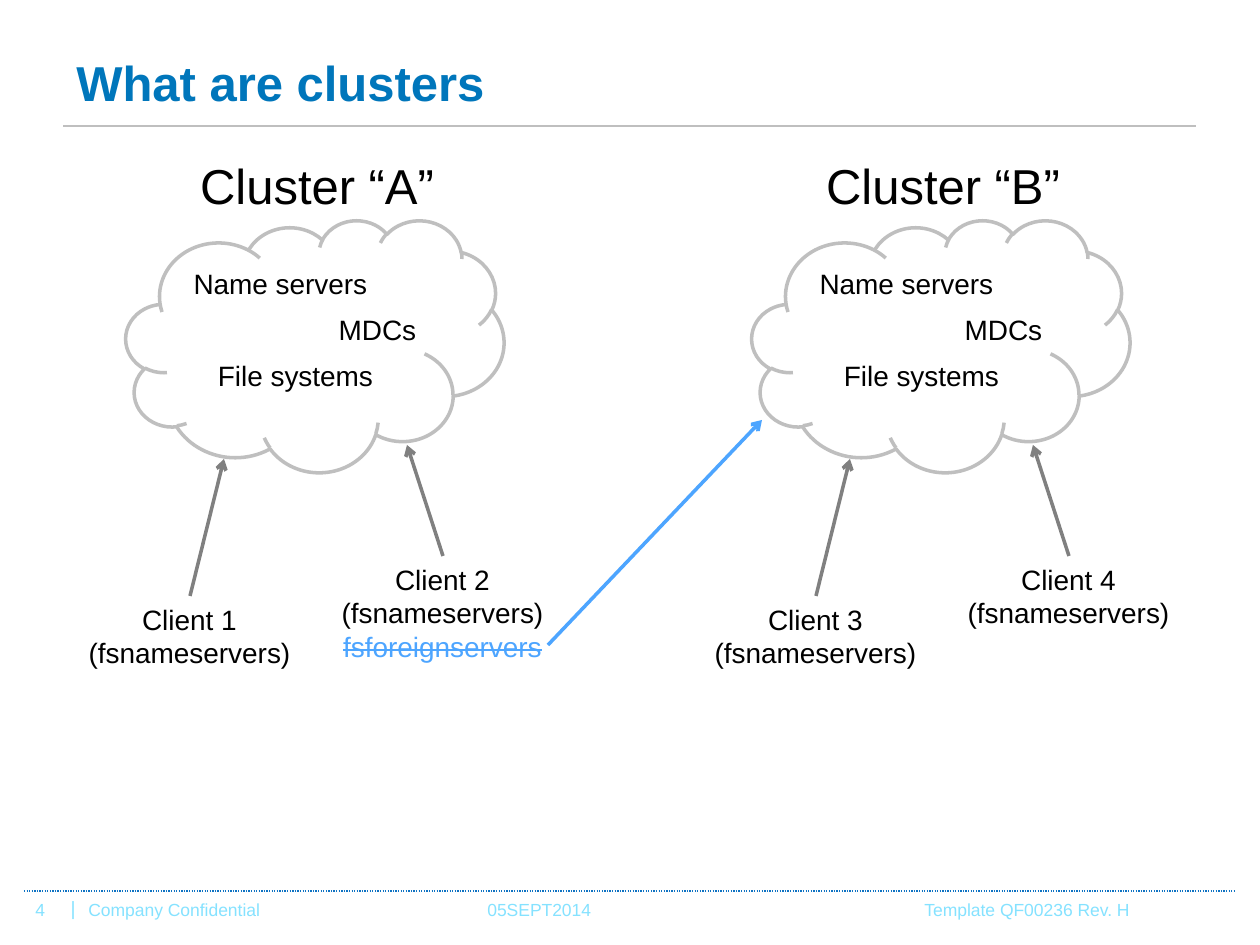
from lxml.etree import SubElement
from pptx import Presentation
from pptx.dml.color import RGBColor
from pptx.enum.dml import MSO_LINE
from pptx.enum.shapes import MSO_CONNECTOR, MSO_SHAPE
from pptx.enum.text import MSO_ANCHOR, MSO_AUTO_SIZE, PP_ALIGN
from pptx.oxml.ns import qn
from pptx.util import Emu, Pt

PX = 914400 / 126
BLACK, GRAY, SILVER = "000000", "808080", "BFBFBF"
BLUE, SKY, TITLE_BLUE, RULE_BLUE = "4DA5FF", "85E2FF", "0076BB", "0F73C3"
CLUSTER_STEP = 626


def px(value):
    return Emu(round(value * PX))


def color(hex_code):
    return RGBColor.from_string(hex_code)


def add_text(page, at, text, size=16, fill=BLACK, bold=False, center=True,
             anchor=MSO_ANCHOR.TOP, grow=True, struck=None):
    """Add a text box; struck is a further line in struck-out blue."""
    box = page.shapes.add_textbox(*map(px, at))
    frame = box.text_frame
    frame.word_wrap = True
    frame.auto_size = MSO_AUTO_SIZE.SHAPE_TO_FIT_TEXT if grow else MSO_AUTO_SIZE.NONE
    frame.vertical_anchor = anchor
    para = frame.paragraphs[0]
    para.alignment = PP_ALIGN.CENTER if center else PP_ALIGN.LEFT
    para.font.size = Pt(size)
    lines = [(line, fill) for line in text.split("\n")]
    if struck:
        lines.append((struck, BLUE))
    for index, (line, line_color) in enumerate(lines):
        if index:
            para.add_line_break()
        span = para.add_run()
        span.text = line
        span.font.name = "Arial"
        span.font.size = Pt(size)
        span.font.bold = bold
        span.font.color.rgb = color(line_color)
    if struck:
        span.font._element.set("strike", "sngStrike")


def add_line(page, start, end, stroke, width=0.75, dash=None, arrow=False):
    line = page.shapes.add_connector(MSO_CONNECTOR.STRAIGHT, *map(px, start + end))
    line.line.color.rgb = color(stroke)
    line.line.width = Pt(width)
    if dash:
        line.line.dash_style = dash
    if arrow:
        SubElement(line.line._get_or_add_ln(), qn("a:tailEnd"), type="arrow")
    SubElement(line._element.spPr, qn("a:effectLst"))


def add_cloud(page, at):
    cloud = page.shapes.add_shape(MSO_SHAPE.CLOUD, *map(px, at))
    cloud.shadow.inherit = False
    cloud.fill.background()
    cloud.line.color.rgb = color(SILVER)
    cloud.line.width = Pt(2)


def add_cluster(page, shift, name, clients, foreign=None):
    """Add a cloud with its services and the two clients that point to it."""
    add_cloud(page, (126 + shift, 220, 378, 252))
    add_text(page, (126 + shift, 149, 382, 72), f"Cluster “{name}”", size=28)
    for left, top, service in ((154, 260, "Name servers"), (251, 306, "MDCs"),
                               (169, 352, "File systems")):
        add_text(page, (left + shift, top, 253, 47), service)
    low, high = (f"Client {number}\n(fsnameservers)" for number in clients)
    add_text(page, (63 + shift, 596, 253, 80), low)
    add_text(page, (316 + shift, 556, 253, 115 if foreign else 80), high, struck=foreign)
    for start, end in (((190, 596), (224, 459)), ((443, 556), (407, 445))):
        add_line(page, (start[0] + shift, start[1]), (end[0] + shift, end[1]),
                 GRAY, width=2, arrow=True)


def add_footer(page):
    add_line(page, (24, 891), (1236, 891), RULE_BLUE, dash=MSO_LINE.ROUND_DOT)
    for at, text, size in (
        ((23, 893, 65, 34), "4", 10),
        ((76, 893, 197, 33), "Company Confidential", 10),
        ((59, 890, 24, 34), "|", 11),
        ((475, 893, 309, 33), "05SEPT2014", 10),
        ((912, 893, 309, 33), "Template QF00236 Rev. H", 10),
    ):
        add_text(page, at, text, size=size, fill=SKY, center=False, grow=False)


def main():
    deck = Presentation()
    deck.slide_width, deck.slide_height = px(1260), px(945)
    page = deck.slides.add_slide(deck.slide_layouts[6])
    add_footer(page)
    add_line(page, (63, 126), (1196, 126), SILVER)
    add_text(page, (64, 40, 1133, 83), "What are clusters", size=28, fill=TITLE_BLUE,
             bold=True, center=False, anchor=MSO_ANCHOR.MIDDLE, grow=False)
    add_cluster(page, 0, "A", (1, 2), foreign="fsforeignservers")
    add_cluster(page, CLUSTER_STEP, "B", (3, 4))
    add_line(page, (548, 645), (762, 420), BLUE, width=2, arrow=True)
    deck.save("out.pptx")


if __name__ == "__main__":
    main()
